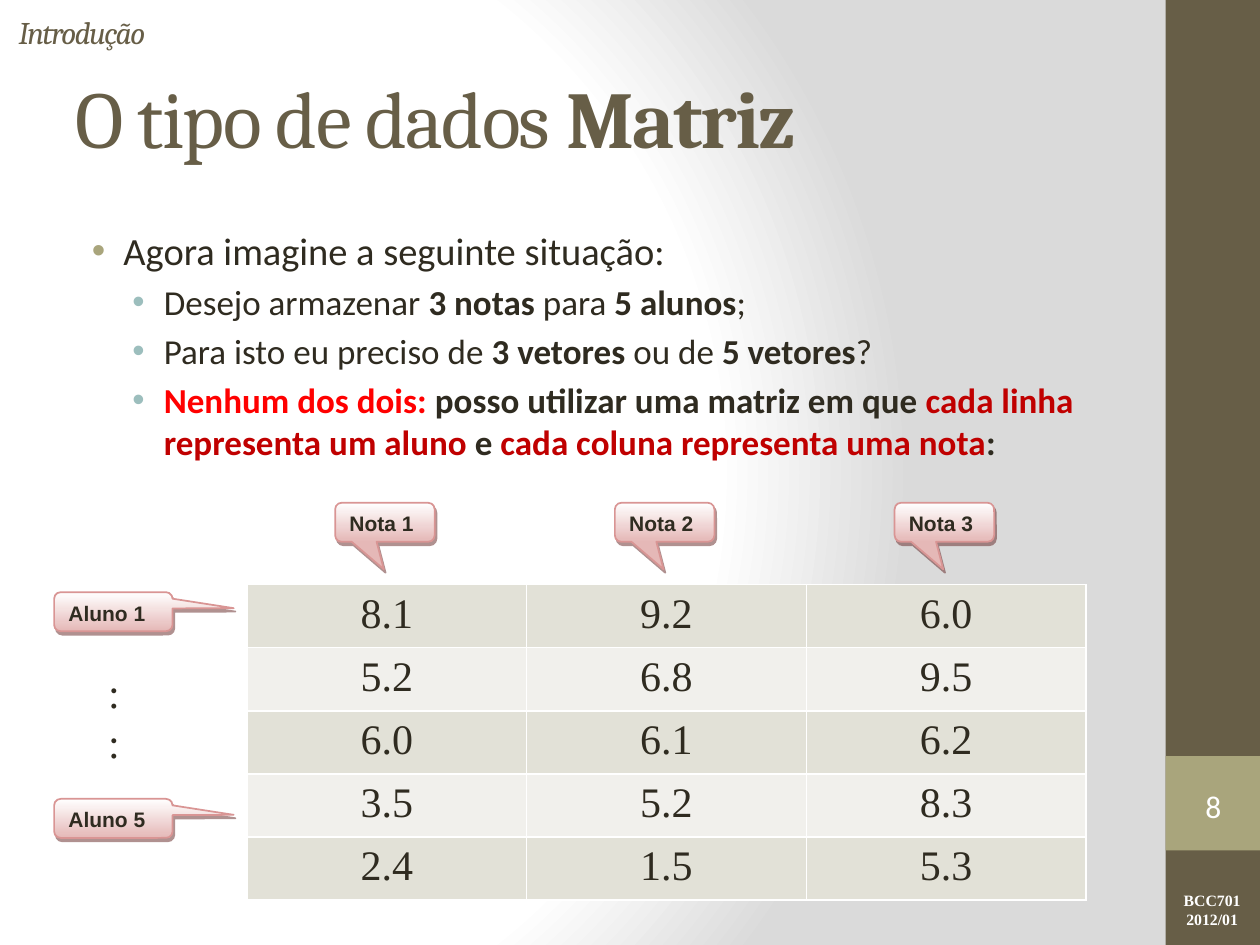
from typing import NamedTuple

from lxml import etree
from pptx import Presentation
from pptx import util as u
from pptx.dml.color import RGBColor
from pptx.enum import shapes, text
from pptx.oxml import parse_xml
from pptx.oxml.ns import nsdecls, qn

W, H = 10, 7.5
SIDE_X, SIDE_W = 0.925 * W, 0.075 * W
TABLE_X, TABLE_Y, COL, ROW = 1.96, 4.64, 2.22, 0.41
INK, BROWN, OLIVE, WHITE = "2F2B20", "675E47", "A9A57C", "FFFFFF"
RED, DARK_RED = "FF0000", "C00000"
BANDS = ("E2E1D7", "F1F0EC")
LEFT, CENTER = text.PP_ALIGN.LEFT, text.PP_ALIGN.CENTER
TOP, MIDDLE = text.MSO_ANCHOR.TOP, text.MSO_ANCHOR.MIDDLE


class Box(NamedTuple):
    x: float
    y: float
    w: float
    h: float

    def emu(self) -> list:
        return [u.Inches(v) for v in self]


class Style(NamedTuple):
    font: str
    size: float
    color: str = INK
    bold: bool = False
    italic: bool = False
    spacing: int = 0


class Run(NamedTuple):
    text: str
    bold: bool = False
    color: str = INK


class Item(NamedTuple):
    level: int
    size: int
    runs: tuple


class Callout(NamedTuple):
    label: str
    box: Box
    tip: tuple


GRADES = (
    ("8.1", "9.2", "6.0"),
    ("5.2", "6.8", "9.5"),
    ("6.0", "6.1", "6.2"),
    ("3.5", "5.2", "8.3"),
    ("2.4", "1.5", "5.3"),
)
ITEMS = (
    Item(0, 22, (Run("Agora imagine a seguinte situação:"),)),
    Item(1, 20, (Run("Desejo armazenar "), Run("3 notas", True), Run(" para "),
                 Run("5 alunos", True), Run(";"))),
    Item(1, 20, (Run("Para isto eu preciso de "), Run("3 vetores ", True), Run("ou de "),
                 Run("5 vetores", True), Run("?"))),
    Item(1, 20, (Run("Nenhum dos dois:", True, RED),
                 Run(" posso utilizar uma matriz em que ", True),
                 Run("cada linha representa um aluno ", True, DARK_RED), Run("e ", True),
                 Run("cada coluna representa uma nota", True, DARK_RED), Run(":", True))),
)
BULLETS = ((0.38, OLIVE), (0.7, "9CBEBD"))
CALLOUTS = [
    Callout(f"Nota {i + 1}", Box(TABLE_X + 0.7 + i * COL, 3.99, 0.79, 0.31), (-0.011, 1.205))
    for i in range(3)
] + [
    Callout(f"Aluno {i + 1}", Box(0.43, TABLE_Y + 0.06 + i * ROW, 0.94, 0.31), (1.016, -0.09))
    for i in (0, 4)
]


def rgb(color: str) -> RGBColor:
    return RGBColor.from_string(color)


def add_run(p, content: str, st: Style) -> None:
    r = p.add_run()
    r.text = content
    f = r.font
    f.name, f.size, f.bold, f.italic = st.font, u.Pt(st.size), st.bold, st.italic
    f.color.rgb = rgb(st.color)
    if st.spacing:
        r._r.get_or_add_rPr().set("spc", str(st.spacing * 100))


def write(tf, lines, st: Style, align=LEFT, anchor=TOP) -> None:
    tf.vertical_anchor = anchor
    for i, line in enumerate(lines):
        p = tf.add_paragraph() if i else tf.paragraphs[0]
        p.alignment = align
        add_run(p, line, st)


def add_text(s, box: Box, lines, st: Style, align=LEFT, anchor=TOP, wrap=True) -> None:
    tf = s.shapes.add_textbox(*box.emu()).text_frame
    tf.word_wrap = wrap
    write(tf, lines, st, align, anchor)


def add_block(s, box: Box, color: str) -> None:
    sp = s.shapes.add_shape(shapes.MSO_SHAPE.RECTANGLE, *box.emu())
    sp.shadow.inherit = False
    sp.fill.solid()
    sp.fill.fore_color.rgb = rgb(color)
    sp.line.fill.background()


def place(sp, box: Box) -> None:
    sp.left, sp.top, sp.width, sp.height = box.emu()
    sp.text_frame.auto_size = text.MSO_AUTO_SIZE.NONE


def set_background(s) -> None:
    s.background.fill.solid()
    bg = s.background._cSld.find(qn("p:bg")).find(qn("p:bgPr"))
    stops = "".join(f'<a:gs pos="{pos}000"><a:srgbClr val="{c}"/></a:gs>'
                    for pos, c in ((0, WHITE), (75, WHITE), (100, "DADADA")))
    bg.replace(bg[0], parse_xml(
        f'<a:gradFill {nsdecls("a")} rotWithShape="1"><a:gsLst>{stops}</a:gsLst>'
        '<a:path path="circle"><a:fillToRect l="20000" t="50000" r="100000" b="50000"/>'
        '</a:path></a:gradFill>'))


def add_bullets(tf) -> None:
    for i, item in enumerate(ITEMS):
        p = tf.add_paragraph() if i else tf.paragraphs[0]
        p.level = item.level
        margin, color = BULLETS[item.level]
        pPr = p._p.get_or_add_pPr()
        pPr.set("marL", str(u.Inches(margin)))
        pPr.set("indent", str(u.Inches(-0.25)))
        before = 20000 if i else 0
        for xml in (f'<a:spcBef {nsdecls("a")}><a:spcPct val="{before}"/></a:spcBef>',
                    f'<a:buClr {nsdecls("a")}><a:srgbClr val="{color}"/></a:buClr>',
                    f'<a:buFont {nsdecls("a")} typeface="Arial"/>',
                    f'<a:buChar {nsdecls("a")} char="•"/>'):
            pPr.append(parse_xml(xml))
        for run in item.runs:
            add_run(p, run.text, Style("Calibri", item.size, run.color, run.bold))


def add_grades(s) -> None:
    rows, cols = len(GRADES), len(GRADES[0])
    box = Box(TABLE_X, TABLE_Y, cols * COL, rows * ROW)
    tbl = s.shapes.add_table(rows, cols, *box.emu()).table
    tbl.first_row = tbl.horz_banding = False
    for i, row in enumerate(GRADES):
        for j, grade in enumerate(row):
            cell = tbl.cell(i, j)
            tcPr = cell._tc.get_or_add_tcPr()
            for side in ("lnL", "lnR", "lnT", "lnB"):
                ln = etree.SubElement(tcPr, qn(f"a:{side}"), w=str(u.Pt(1)))
                fill = etree.SubElement(ln, qn("a:solidFill"))
                etree.SubElement(fill, qn("a:srgbClr"), val=WHITE)
            cell.fill.solid()
            cell.fill.fore_color.rgb = rgb(BANDS[i % 2])
            write(cell.text_frame, [grade], Style("Times New Roman", 24), CENTER)


def add_callout(s, c: Callout) -> None:
    sp = s.shapes.add_shape(shapes.MSO_SHAPE.ROUNDED_RECTANGULAR_CALLOUT, *c.box.emu())
    sp.adjustments[0], sp.adjustments[1] = c.tip
    sp.fill.gradient()
    sp.fill.gradient_angle = 270
    for stop, color in zip(sp.fill.gradient_stops, (WHITE, "E5B8B7")):
        stop.color.rgb = rgb(color)
    sp.line.color.rgb = rgb("D99594")
    sp.line.width = u.Pt(1)
    sp.shadow.inherit = False
    sp._element.spPr.find(qn("a:effectLst")).append(parse_xml(
        f'<a:outerShdw {nsdecls("a")} dist="{u.Pt(2.2)}" dir="{63 * 60000}" algn="ctr" '
        'rotWithShape="0"><a:srgbClr val="622423"><a:alpha val="50000"/></a:srgbClr>'
        '</a:outerShdw>'))
    write(sp.text_frame, [c.label], Style("Arial", 12, bold=True))
    sp.text_frame.paragraphs[0].space_after = u.Pt(10)


def main() -> None:
    prs = Presentation()
    prs.slide_width, prs.slide_height = u.Inches(W), u.Inches(H)
    s = prs.slides.add_slide(prs.slide_layouts[1])
    set_background(s)
    title, body = s.placeholders
    place(title, Box(0.05 * W, 0.04 * H, 8.33, H / 6))
    place(body, Box(0.05 * W, 1.75, 8.33, 0.7 * H))
    add_block(s, Box(SIDE_X, 0, SIDE_W, H), BROWN)
    add_block(s, Box(SIDE_X, 0.8 * H, SIDE_W, 0.1 * H), OLIVE)
    add_text(s, Box(9.26, 7.02, 0.72, 0.4), ["BCC701", "2012/01"],
             Style("Times New Roman", 9, WHITE, True), CENTER)
    write(title.text_frame, ["O tipo de dados "], Style("Cambria", 46, BROWN, spacing=-1),
          anchor=MIDDLE)
    add_run(title.text_frame.paragraphs[0], "Matriz",
            Style("Cambria", 46, BROWN, True, spacing=-1))
    add_bullets(body.text_frame)
    add_text(s, Box(9.33, 6.18, 0.6, 0.43), ["8"], Style("Calibri", 18, WHITE), CENTER, MIDDLE)
    add_text(s, Box(0.05, 0.08, 8.32, 0.34), ["Introdução"],
             Style("Cambria", 18, BROWN, italic=True, spacing=-1), anchor=MIDDLE)
    add_grades(s)
    for c in CALLOUTS:
        add_callout(s, c)
    add_text(s, Box(0.76, 5.24, 0.29, 0.91), [":", ":"], Style("Times New Roman", 24), wrap=False)
    prs.save("out.pptx")


if __name__ == "__main__":
    main()
